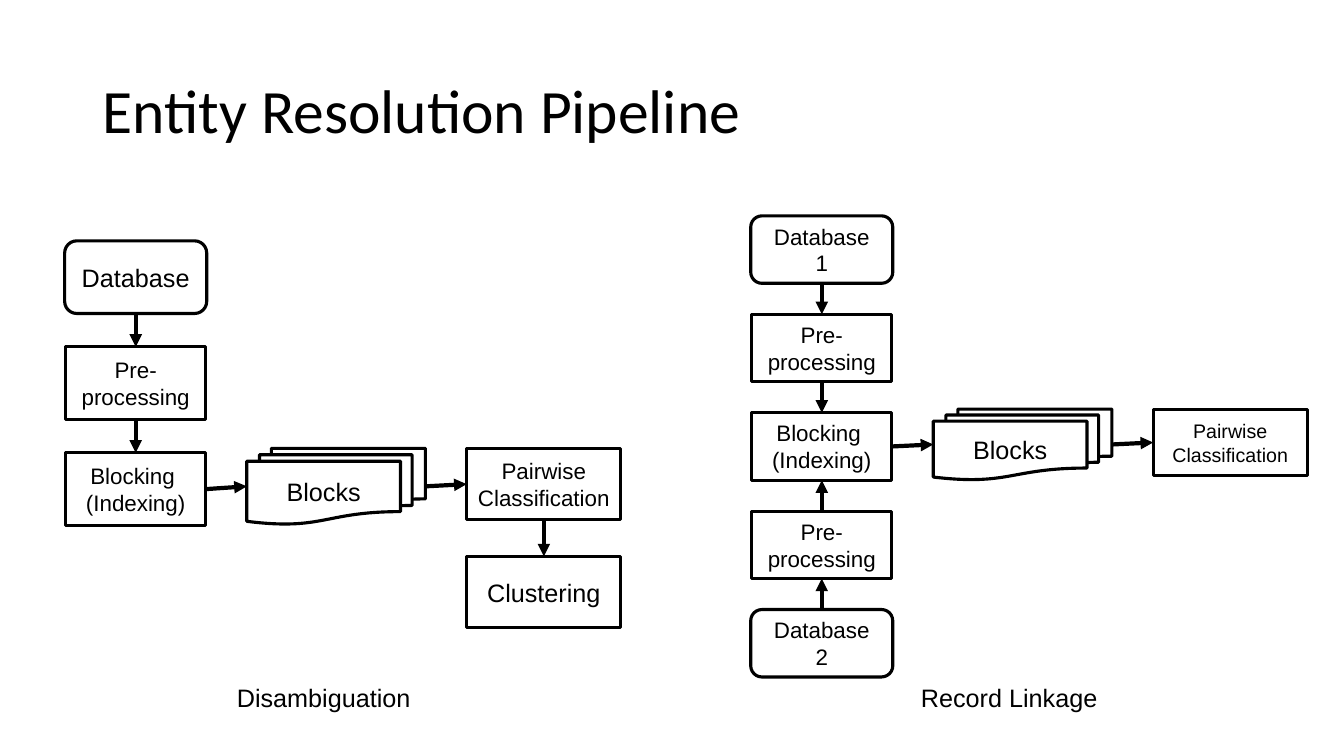
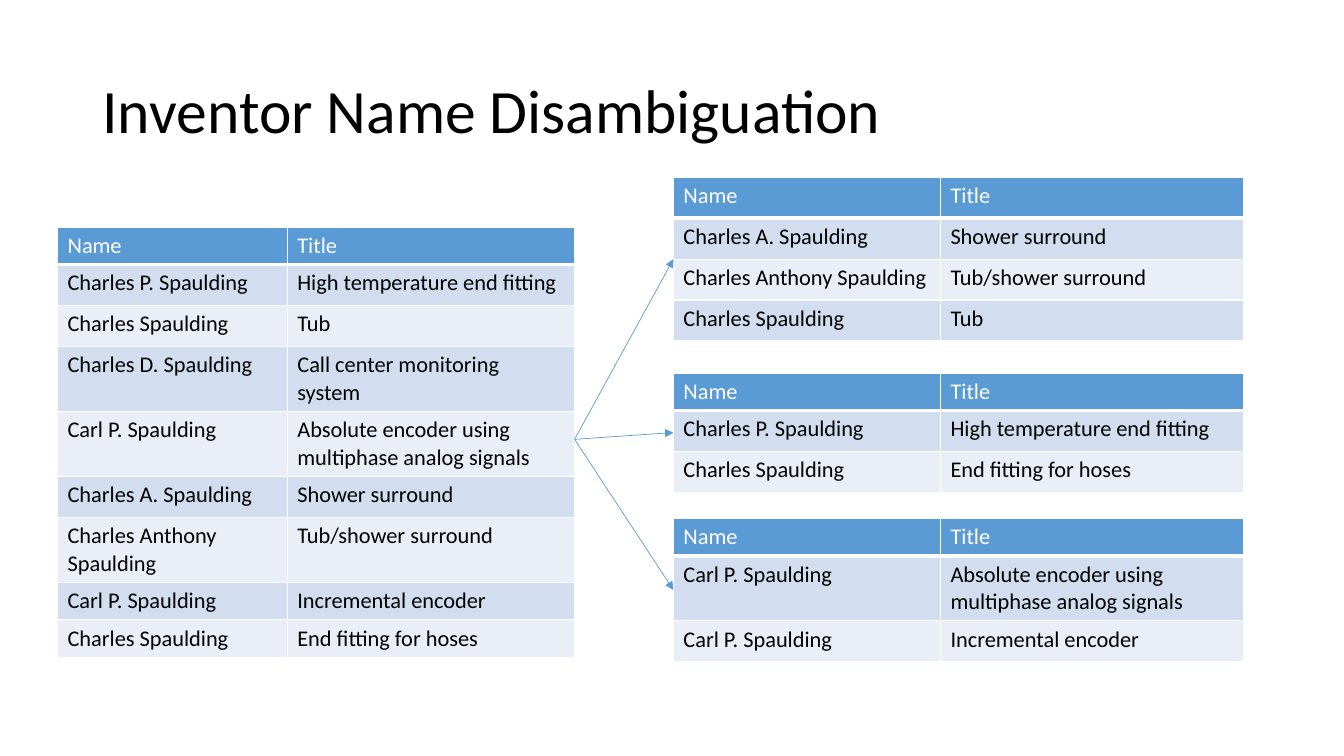
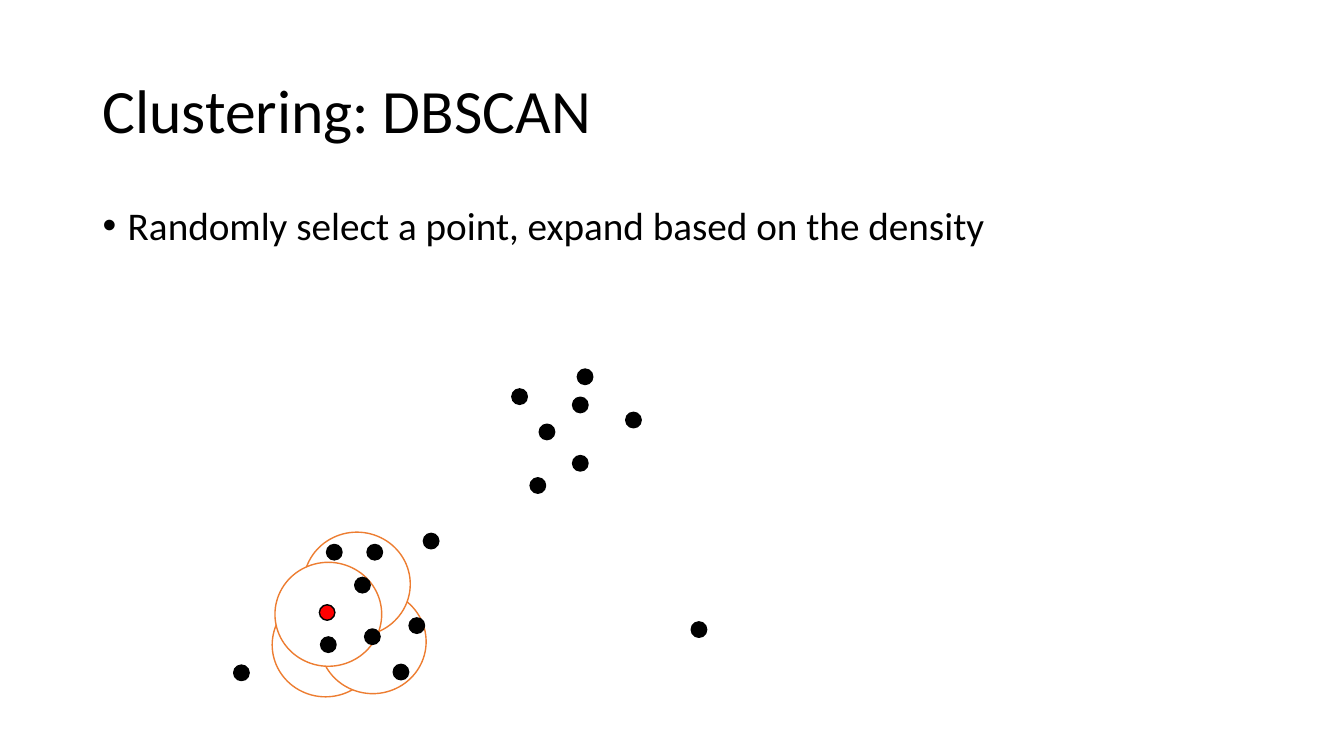
from dataclasses import dataclass
from itertools import pairwise

from lxml.etree import SubElement as Sub
from pptx import Presentation
from pptx.dml.color import RGBColor as RGB
from pptx.enum.shapes import MSO_CONNECTOR as Conn, MSO_SHAPE as Kind
from pptx.enum.text import MSO_ANCHOR as Anchor, MSO_AUTO_SIZE as Fit, PP_ALIGN as Align
from pptx.oxml.ns import qn
from pptx.util import Cm, Pt


@dataclass(frozen=True)
class Theme:
    black: str = "000000"
    white: str = "FFFFFF"
    red: str = "FF0000"
    blue: str = "5B9BD5"
    orange: str = "ED7D31"
    bands: tuple = ("D2DEEF", "EAEFF7")
    main: str = "Calibri"
    plain: str = "Arial"
    title: int = 44
    body: int = 28
    label: int = 18
    cell: int = 16
    small: int = 14


T = Theme()
TOP, LEFT, BOTTOM, RIGHT = range(4)  # connection sites


# Text and slide frame
def style(par, size, name=T.main, color=T.black):
    font = par.font
    font.size, font.name, font.bold = Pt(size), name, False
    font.color.rgb = RGB.from_string(color)


def place(shape, x, y, w, h):
    shape.left, shape.top, shape.width, shape.height = map(Cm, (x, y, w, h))


def start(prs, title, layout=5):
    slide = prs.slides.add_slide(prs.slide_layouts[layout])
    head = slide.shapes.title
    place(head, 2.33, 1.01, 29.21, 3.68)
    frame = head.text_frame
    frame.text = title
    frame.auto_size = Fit.NONE
    frame.vertical_anchor = Anchor.MIDDLE
    par = frame.paragraphs[0]
    par.alignment, par.line_spacing = Align.LEFT, 0.9
    style(par, T.title)
    return slide


def bullets(slide, items):
    body = slide.placeholders[1]
    place(body, 2.33, 5.07, 29.21, 12.09)
    frame = body.text_frame
    frame.text = "\n".join(items)
    frame.auto_size = Fit.NONE
    for par in frame.paragraphs:
        par.line_spacing, par.space_before = 0.9, Pt(10)
        props = par._p.get_or_add_pPr()
        props.set("marL", str(Cm(0.635)))
        props.set("indent", str(-Cm(0.635)))
        style(par, T.body)


def label(slide, x, y, text):
    box = slide.shapes.add_textbox(Cm(x), Cm(y), Cm(5.61), Cm(1.02))
    frame = box.text_frame
    frame.word_wrap, frame.auto_size = True, Fit.SHAPE_TO_FIT_TEXT
    frame.text = text
    style(frame.paragraphs[0], T.label, T.plain)


# Shapes and arrows
def draw(slide, kind, x, y, w, h, fill=T.white, line=T.black, width=1):
    shape = slide.shapes.add_shape(kind, Cm(x), Cm(y), Cm(w), Cm(h))
    shape.shadow.inherit = False
    shape.fill.solid()
    shape.fill.fore_color.rgb = RGB.from_string(fill)
    shape.line.color.rgb = RGB.from_string(line)
    shape.line.width = Pt(width)
    return shape


def node(slide, kind, x, y, w, h, text, size, inset=(0.25, 0.13)):
    shape = draw(slide, kind, x, y, w, h, width=2.25)
    frame = shape.text_frame
    frame.word_wrap, frame.vertical_anchor = True, Anchor.MIDDLE
    frame.margin_left = frame.margin_right = Cm(inset[0])
    frame.margin_top = frame.margin_bottom = Cm(inset[1])
    frame.text = text
    for par in frame.paragraphs:
        par.alignment = Align.CENTER
        style(par, size, T.plain)
    return shape


def arrow(slide, ends, color=T.black, width=3):
    link = slide.shapes.add_connector(Conn.STRAIGHT, *ends)
    link.line.color.rgb = RGB.from_string(color)
    link.line.width = Pt(width)
    Sub(link.line._get_or_add_ln(), qn("a:tailEnd"), type="triangle")
    Sub(link._element.spPr, qn("a:effectLst"))
    return link


def join(slide, a, b, out=RIGHT, into=LEFT):
    link = arrow(slide, (0, 0, 0, 0))
    link.begin_connect(a, out)
    link.end_connect(b, into)


def column(slide, mid, top, step, h, items, inset=(0.25, 0.13)):
    nodes = []
    for i, (kind, text, size) in enumerate(items):
        w = 3.53 if kind == Kind.RECTANGLE else 3.58
        nodes.append(node(slide, kind, mid - w / 2, top + i * step, w, h, text, size, inset))
    return nodes


# Tables
def edge(cell, side, width):
    props = cell._tc.get_or_add_tcPr()
    line = Sub(props, qn("a:ln" + side), w=str(Pt(width)))
    Sub(Sub(line, qn("a:solidFill")), qn("a:srgbClr"), val=T.white)


def table(slide, x, y, cols, rows, heights):
    rows = [("Name", "Title"), *rows]
    frame = slide.shapes.add_table(len(rows), len(cols), Cm(x), Cm(y),
                                   Cm(sum(cols)), Cm(sum(heights)))
    grid = frame.table
    for col, w in zip(grid.columns, cols):
        col.width = Cm(w)
    for r, (row, h) in enumerate(zip(rows, heights)):
        grid.rows[r].height = Cm(h)
        fill = T.bands[(r - 1) % 2] if r else T.blue
        for c, text in enumerate(row):
            cell = grid.cell(r, c)
            for side in "LRTB":
                thick = (side == "B" and r == 0) or (side == "T" and r == 1)
                edge(cell, side, 3 if thick else 1)
            cell.fill.solid()
            cell.fill.fore_color.rgb = RGB.from_string(fill)
            cell.text = text
            style(cell.text_frame.paragraphs[0], T.cell,
                  color=T.black if r else T.white)
    return frame


# Slides
def pipeline(prs):
    slide = start(prs, "Entity Resolution Pipeline")
    box, store, docs = Kind.RECTANGLE, Kind.FLOWCHART_ALTERNATE_PROCESS, Kind.FLOWCHART_MULTIDOCUMENT
    prep = (box, "Pre-\nprocessing", T.cell)
    index = (box, "Blocking \n(Indexing)", T.cell)
    pair = "Pairwise Classification"

    # One database
    steps = column(slide, 3.42, 6.07, 2.67, 1.83,
                   [(store, "Database", T.label), prep, index])
    blocks = node(slide, docs, 6.22, 11.3, 4.5, 1.91, "Blocks", T.label)
    match = node(slide, box, 11.76, 11.3, 3.89, 1.8, pair, T.cell)
    group = node(slide, box, 11.76, 14.02, 3.89, 1.8, "Clustering", T.label)
    for a, b in [*pairwise(steps), (match, group)]:
        join(slide, a, b, BOTTOM, TOP)
    for a, b in pairwise([steps[-1], blocks, match]):
        join(slide, a, b)
    label(slide, 5.72, 17.07, "Disambiguation")

    # Two databases
    inset = (0.38, 0.18)
    steps = column(slide, 20.71, 5.44, 2.48, 1.7,
                   [(store, "Database 1", T.cell), prep, index, prep,
                    (store, "Database 2", T.cell)], inset)
    blocks = node(slide, docs, 23.52, 10.31, 4.5, 1.78, "Blocks", T.label, inset)
    match = node(slide, box, 29.06, 10.31, 3.89, 1.68, pair, T.small, inset)
    for a, b in pairwise(steps[:3]):
        join(slide, a, b, BOTTOM, TOP)
    for a, b in pairwise(steps[:1:-1]):
        join(slide, a, b, TOP, BOTTOM)
    for a, b in pairwise([steps[2], blocks, match]):
        join(slide, a, b)
    label(slide, 22.96, 17.07, "Record Linkage")


def names(prs):
    slide = start(prs, "Inventor Name Disambiguation")
    low, mid, tall = 0.94, 1.03, 1.64  # row heights
    fitting = ("Charles P. Spaulding", "High temperature end fitting")
    tub = ("Charles Spaulding", "Tub")
    encoder = ("Carl P. Spaulding", "Absolute encoder using multiphase analog signals")
    shower = ("Charles A. Spaulding", "Shower surround")
    both = ("Charles Anthony Spaulding", "Tub/shower surround")
    step = ("Carl P. Spaulding", "Incremental encoder")
    hose = ("Charles Spaulding", "End fitting for hoses")
    call = ("Charles D. Spaulding", "Call center monitoring system")

    mixed = table(slide, 1.45, 5.72, (5.79, 7.24),
                  [fitting, tub, call, encoder, shower, both, step, hose],
                  (low, mid, mid, tall, tall, mid, tall, low, low))
    people = [
        (4.47, [shower, both, tub], (mid, mid, mid, mid)),
        (9.4, [fitting, hose], (low, mid, mid)),
        (13.06, [encoder, step], (low, tall, mid)),
    ]
    for top, rows, heights in people:
        part = table(slide, 16.97, top, (6.73, 7.65), rows, heights)
        ends = (mixed.left + mixed.width, Cm(11.07),
                part.left, part.top + part.height // 2)
        arrow(slide, ends, T.blue, 0.5)


def scan(prs):
    slide = start(prs, "Clustering: DBSCAN", 1)
    bullets(slide, ["Randomly select a point, expand based on the density"])
    rings = [(6.86, 14.94), (8.05, 14.86), (7.65, 13.41), (6.93, 14.17)]
    near = [(9.91, 16.74), (10.31, 15.57), (8.23, 13.72), (8.94, 14.55),
            (9.19, 15.85), (8.08, 16.05), (9.25, 13.72), (10.67, 13.44)]
    far = [(13.59, 10.69), (13.36, 12.04), (14.55, 9.3), (15.77, 10.39),
           (12.9, 9.8), (14.43, 11.48), (14.43, 10.01)]
    noise = [(5.89, 16.76), (17.42, 15.67)]
    seed = (8.05, 15.24)
    for x, y in rings:
        draw(slide, Kind.OVAL, x, y, 2.69, 2.62, line=T.orange)
    for x, y in near + far + noise:
        draw(slide, Kind.OVAL, x, y, 0.39, 0.39, T.black)
    draw(slide, Kind.OVAL, *seed, 0.39, 0.39, T.red)


def main():
    prs = Presentation()
    prs.slide_width, prs.slide_height = Cm(33.87), Cm(19.05)
    pipeline(prs)
    names(prs)
    scan(prs)
    prs.save("out.pptx")


if __name__ == "__main__":
    main()
